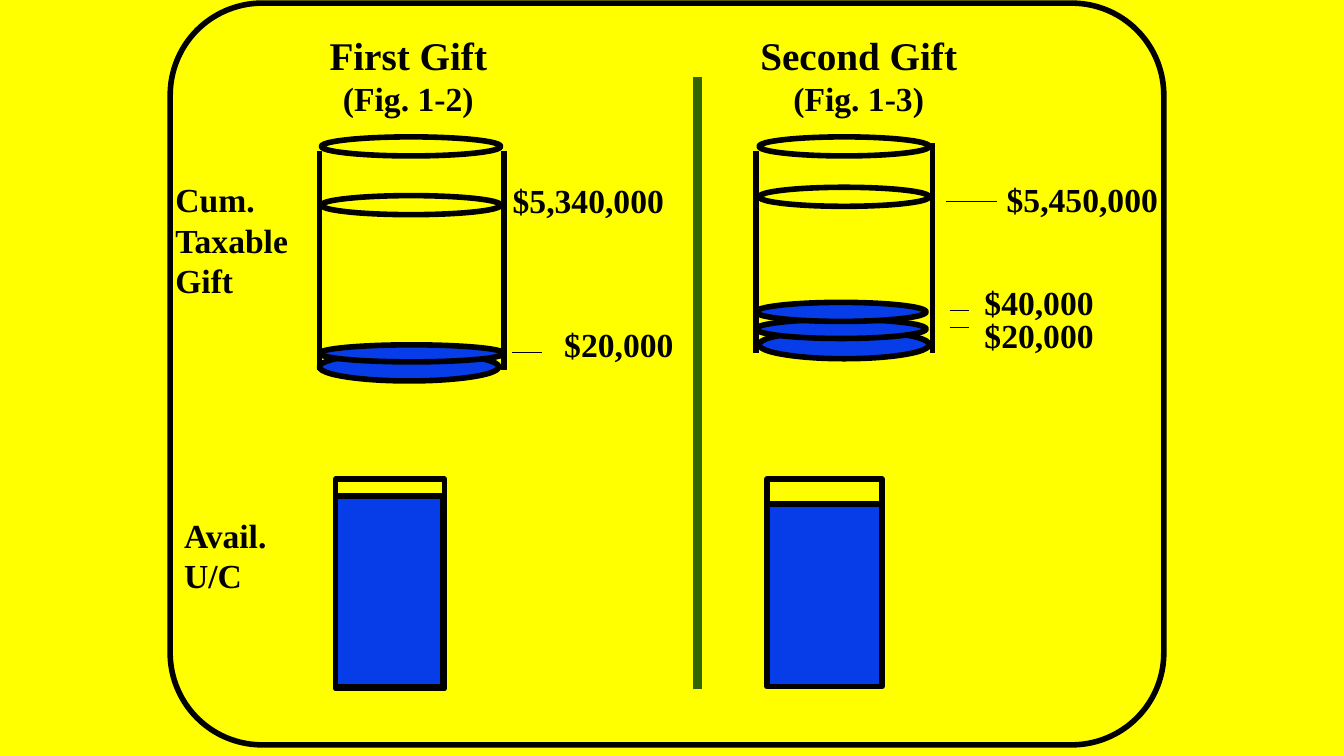
from dataclasses import dataclass

from lxml.etree import SubElement
from pptx import Presentation
from pptx.dml.color import RGBColor
from pptx.enum.shapes import MSO_CONNECTOR, MSO_SHAPE as Preset
from pptx.enum.text import MSO_AUTO_SIZE, PP_ALIGN as Align
from pptx.oxml.ns import qn
from pptx.util import Cm, Pt


@dataclass(frozen=True)
class Theme:
    yellow: RGBColor = RGBColor(0xFF, 0xFF, 0x00)
    blue: RGBColor = RGBColor(0x06, 0x3D, 0xE8)
    green: RGBColor = RGBColor(0x31, 0x65, 0x01)
    black: RGBColor = RGBColor(0x00, 0x00, 0x00)
    font: str = "Times New Roman"
    title: int = 28
    body: int = 24
    outline: int = 4
    leader: int = 1
    divider: int = 6


THEME = Theme()
RING_HEIGHT = 0.48


def add_outline(slide, preset, left, top, width, height, fill=None):
    """Add a black-outlined preset shape, hollow unless a fill is given."""
    shape = slide.shapes.add_shape(preset, Cm(left), Cm(top), Cm(width), Cm(height))
    shape.shadow.inherit = False
    if fill is None:
        shape.fill.background()
    else:
        shape.fill.solid()
        shape.fill.fore_color.rgb = fill
    shape.line.color.rgb = THEME.black
    shape.line.width = Pt(THEME.outline)
    return shape


def add_line(slide, x1, y1, x2, y2, weight, color=THEME.black):
    line = slide.shapes.add_connector(
        MSO_CONNECTOR.STRAIGHT, Cm(x1), Cm(y1), Cm(x2), Cm(y2))
    line.line.color.rgb = color
    line.line.width = Pt(weight)
    SubElement(line._element.spPr, qn("a:effectLst"))


def add_label(slide, text, left, top, width, height=1.27,
              align=Align.LEFT, first_size=THEME.body):
    """Add bold text; the first paragraph may have its own size."""
    box = slide.shapes.add_textbox(Cm(left), Cm(top), Cm(width), Cm(height))
    frame = box.text_frame
    frame.word_wrap = False
    frame.auto_size = MSO_AUTO_SIZE.SHAPE_TO_FIT_TEXT
    frame.text = text
    for index, paragraph in enumerate(frame.paragraphs):
        paragraph.alignment = align
        font = paragraph.runs[0].font
        font.name = THEME.font
        font.bold = True
        font.size = Pt(THEME.body if index else first_size)
        font.color.rgb = THEME.black


def add_heading(slide, text, left, width):
    add_label(slide, text, left, 0.66, width, 2.46, Align.CENTER, THEME.title)


def add_cylinder(slide, walls, rings, layers):
    """Draw walls (x, top, bottom), hollow rings and filled layers of a tank."""
    for x, top, bottom in walls:
        add_line(slide, x, top, x, bottom, THEME.outline)
    for ring in rings:
        add_outline(slide, Preset.OVAL, *ring, RING_HEIGHT)
    for layer in layers:
        add_outline(slide, Preset.OVAL, *layer, THEME.blue)


def add_first_gift(slide):
    add_heading(slide, "First Gift\n(Fig. 1-2)", 8.03, 4.52)
    add_cylinder(
        slide,
        walls=[(x, 3.81, 9.32) for x in (8.05, 12.7)],
        rings=[(8.1, top, 4.52) for top in (3.45, 4.93)],
        layers=[(8.05, 8.89, 4.52, 0.71), (8.05, 8.69, 4.65, 0.43)])
    add_label(slide, "$5,340,000", 12.67, 4.42, 4.34)
    add_line(slide, 12.9, 8.89, 13.67, 8.89, THEME.leader)
    add_label(slide, "$20,000", 13.97, 8.05, 3.28)
    add_outline(slide, Preset.RECTANGLE, 8.46, 12.5, 2.69, 4.8, THEME.blue)
    add_outline(slide, Preset.RECTANGLE, 8.46, 12.07, 2.74, 5.28)


def add_second_gift(slide):
    add_heading(slide, "Second Gift\n(Fig. 1-3)", 18.87, 5.54)
    add_cylinder(
        slide,
        walls=[(19.05, 3.81, 8.89), (23.5, 3.61, 8.89)],
        rings=[(19.13, top, 4.29) for top in (3.45, 4.72)],
        layers=[(19.13, 8.33, 4.29, 0.71),
                (19.05, 8.05, 4.29, RING_HEIGHT),
                (19.05, 7.62, 4.29, RING_HEIGHT)])
    add_line(slide, 25.12, 5.08, 23.83, 5.08, THEME.leader)
    add_label(slide, "$5,450,000", 25.12, 4.39, 4.34)
    for amount, leader_y, top in (("$40,000", 7.82, 6.99), ("$20,000", 8.26, 7.82)):
        add_line(slide, 23.93, leader_y, 24.43, leader_y, THEME.leader)
        add_label(slide, amount, 24.56, top, 3.28)
    add_outline(slide, Preset.RECTANGLE, 19.33, 12.07, 2.9, 0.63)
    add_outline(slide, Preset.RECTANGLE, 19.33, 12.7, 2.9, 4.6, THEME.blue)


def main():
    presentation = Presentation()
    presentation.slide_width = Cm(33.87)
    presentation.slide_height = Cm(19.05)
    slide = presentation.slides.add_slide(presentation.slide_layouts[6])
    slide.background.fill.solid()
    slide.background.fill.fore_color.rgb = THEME.yellow

    frame = add_outline(slide, Preset.ROUNDED_RECTANGLE, 4.29, 0.08, 25.04, 18.69)
    frame.adjustments[0] = 0.124
    add_line(slide, 17.58, 1.93, 17.58, 17.35, THEME.divider, THEME.green)
    add_label(slide, "Cum.\nTaxable\nGift", 4.17, 4.39, 3.38, 3.33)
    add_label(slide, "Avail.\nU/C", 4.39, 12.85, 2.62, 2.31)
    add_first_gift(slide)
    add_second_gift(slide)

    presentation.save("out.pptx")


if __name__ == "__main__":
    main()
